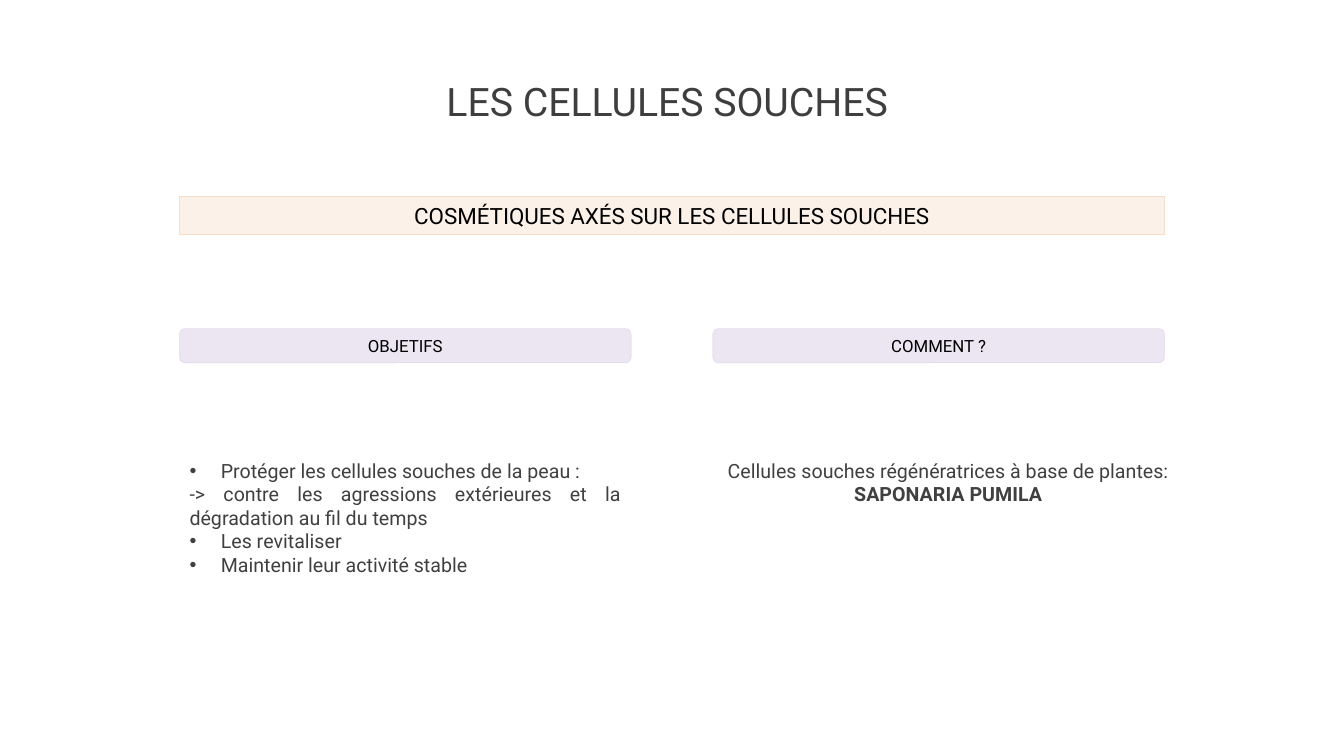
from pptx import Presentation
from pptx.dml.color import RGBColor
from pptx.enum.shapes import MSO_SHAPE as Preset
from pptx.enum.text import MSO_ANCHOR as Anchor, MSO_AUTO_SIZE as AutoSize, PP_ALIGN as Align
from pptx.oxml.xmlchemy import OxmlElement
from pptx.util import Inches, Pt

COLORS = {
    "title": "3E3E3E", "body": "404040", "label": "000000",
    "peach": "FCF1E8", "peach_line": "F7DECA",
    "lilac": "EBE6F2", "lilac_line": "DACFE3",
}
LEFT, COLUMN_WIDTH, RIGHT = 1.78, 4.48, 7.07
BANNER_WIDTH = RIGHT + COLUMN_WIDTH - LEFT
LABEL_TOP, BODY_TOP = 3.26, 4.5
BULLET_INDENT = 0.31


def color(name):
    return RGBColor.from_string(COLORS[name])


def place(shape, left, top, width, height):
    box = {"left": left, "top": top, "width": width, "height": height}
    for name, value in box.items():
        setattr(shape, name, Inches(value))


def prepare_frame(shape, anchor):
    frame = shape.text_frame
    settings = {"word_wrap": True, "auto_size": AutoSize.NONE, "vertical_anchor": anchor}
    for name, value in settings.items():
        setattr(frame, name, value)
    return frame


def set_bullet(paragraph, bulleted):
    """Give the paragraph a hanging bullet, or remove the inherited one."""
    properties = paragraph._p.get_or_add_pPr()
    indent = Inches(BULLET_INDENT) if bulleted else 0
    properties.set("marL", str(indent))
    properties.set("indent", str(-indent))
    bullet = OxmlElement("a:buChar" if bulleted else "a:buNone")
    if bulleted:
        font = OxmlElement("a:buFont")
        font.set("typeface", "Arial")
        properties.append(font)
        bullet.set("char", "•")
    properties.append(bullet)


def format_paragraph(paragraph, size, color_name, align, bold=False, line_spacing=1.0):
    layout = {"alignment": align, "line_spacing": line_spacing,
              "space_before": Pt(0), "space_after": Pt(0)}
    for name, value in layout.items():
        setattr(paragraph, name, value)
    for name, value in {"name": "Roboto", "size": Pt(size), "bold": bold}.items():
        setattr(paragraph.font, name, value)
    paragraph.font.color.rgb = color(color_name)


def fill_title(title, text):
    place(title, 0, 0.59, 13.33, 0.87)
    paragraph = prepare_frame(title, Anchor.MIDDLE).paragraphs[0]
    paragraph.text = text
    format_paragraph(paragraph, 28, "title", Align.CENTER, line_spacing=0.9)


def add_label(slide, preset, box, text, size, fill):
    shape = slide.shapes.add_shape(preset, *map(Inches, box))
    shape.shadow.inherit = False
    shape.fill.solid()
    shape.fill.fore_color.rgb = color(fill)
    shape.line.color.rgb = color(fill + "_line")
    shape.line.width = Pt(0.25)
    paragraph = prepare_frame(shape, Anchor.MIDDLE).paragraphs[0]
    paragraph.text = text
    format_paragraph(paragraph, size, "label", Align.CENTER)


def fill_body(body, box, align, items):
    """Write items given as (text, bulleted, bold)."""
    place(body, *box)
    frame = prepare_frame(body, Anchor.TOP)
    for index, (text, bulleted, bold) in enumerate(items):
        paragraph = frame.add_paragraph() if index else frame.paragraphs[0]
        paragraph.text = text
        set_bullet(paragraph, bulleted)
        format_paragraph(paragraph, 14, "body", align, bold)


def main():
    presentation = Presentation()
    presentation.slide_width = Inches(13.33)
    presentation.slide_height = Inches(7.5)
    slide = presentation.slides.add_slide(presentation.slide_layouts.get_by_name("Two Content"))
    title, goals, method = slide.placeholders

    fill_title(title, "LES CELLULES SOUCHES ")
    add_label(slide, Preset.RECTANGLE, (LEFT, 1.95, BANNER_WIDTH, 0.37),
              "COSMÉTIQUES AXÉS SUR LES CELLULES SOUCHES", 16, "peach")
    for left, text in ((LEFT, "OBJETIFS"), (RIGHT, "COMMENT ?")):
        add_label(slide, Preset.ROUNDED_RECTANGLE, (left, LABEL_TOP, COLUMN_WIDTH, 0.34),
                  text, 12, "lilac")

    fill_body(goals, (LEFT, BODY_TOP, COLUMN_WIDTH, 1.28), Align.JUSTIFY, [
        ("Protéger les cellules souches de la peau :", True, False),
        ("-> contre les agressions extérieures et la dégradation au fil du temps", False, False),
        ("Les revitaliser", True, False),
        ("Maintenir leur activité stable", True, False),
    ])
    fill_body(method, (RIGHT, BODY_TOP, 4.67, 0.81), Align.CENTER, [
        ("Cellules souches régénératrices à base de plantes:", False, False),
        ("SAPONARIA PUMILA", False, True),
    ])
    presentation.save("out.pptx")


if __name__ == "__main__":
    main()
